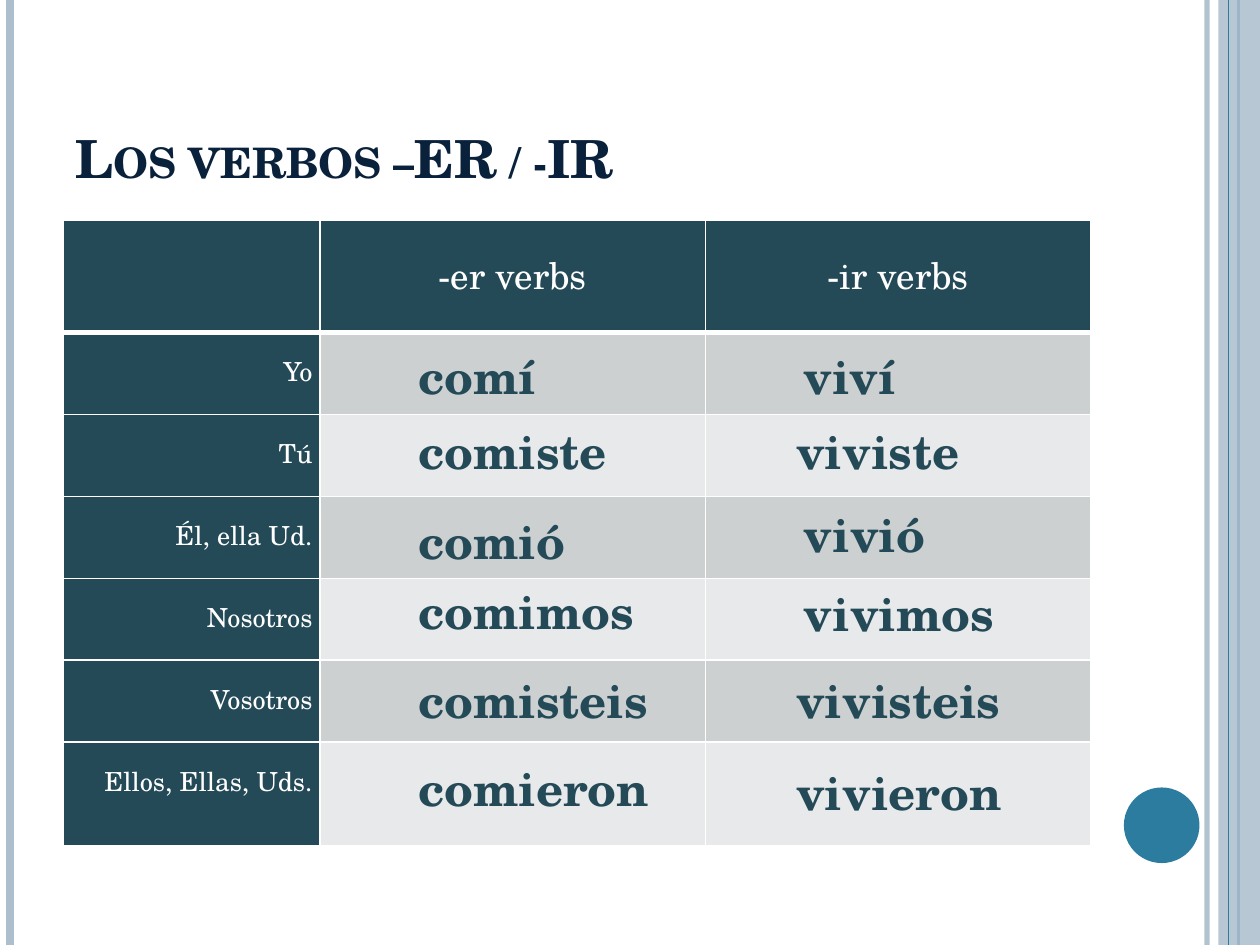
from dataclasses import dataclass

from lxml.etree import SubElement
from pptx import Presentation
from pptx.dml.color import RGBColor
from pptx.enum.shapes import MSO_CONNECTOR as Connector, MSO_SHAPE as Preset
from pptx.enum.text import MSO_ANCHOR as Anchor, MSO_AUTO_SIZE as AutoSize, PP_ALIGN as Align
from pptx.oxml.ns import qn
from pptx.slide import Slide
from pptx.util import Inches, Pt

COLORS = {
    "mist": "ADBFCD",
    "blue": "2C7C9F",
    "navy": "09213B",
    "teal": "244A58",
    "dark_band": "CDD0D1",
    "light_band": "E8E9EA",
    "white": "FFFFFF",
}


@dataclass
class SlideBuilder:
    """Draws styled elements on the current slide."""

    slide: Slide
    font: str = "TeX Gyre Schola"

    def paint(self, fill, color, opacity=100):
        fill.solid()
        fill.fore_color.rgb = RGBColor.from_string(COLORS[color])
        if opacity < 100:
            tint = fill._xPr.find(qn("a:solidFill"))[0]
            SubElement(tint, qn("a:alpha"), val=str(opacity * 1000))

    def stripe(self, x, color, width, opacity=100):
        line = self.slide.shapes.add_connector(
            Connector.STRAIGHT, Inches(x), Inches(0), Inches(x), Inches(7.5))
        line.line.width = Pt(width)
        self.paint(line.line.fill, color, opacity)
        SubElement(line._element.spPr, qn("a:effectLst"))

    def block(self, preset, box, color, opacity=100):
        shape = self.slide.shapes.add_shape(preset, *map(Inches, box))
        shape.shadow.inherit = False
        shape.line.fill.background()
        self.paint(shape.fill, color, opacity)

    def add_words(self, paragraph, words, size, color, bold=False):
        run = paragraph.add_run()
        run.text = words
        run.font.name = self.font
        run.font.size = Pt(size)
        run.font.bold = bold
        run.font.color.rgb = RGBColor.from_string(COLORS[color])
        return run

    def label(self, box, words, size, color):
        frame = self.slide.shapes.add_textbox(*map(Inches, box)).text_frame
        frame.word_wrap = True
        frame.auto_size = AutoSize.SHAPE_TO_FIT_TEXT
        self.add_words(frame.paragraphs[0], words, size, color, bold=True)

    def title(self, box, words):
        frame = self.slide.shapes.add_textbox(*map(Inches, box)).text_frame
        frame.word_wrap = True
        frame.vertical_anchor = Anchor.BOTTOM
        run = self.add_words(frame.paragraphs[0], words, 30, "navy", bold=True)
        run._r.get_or_add_rPr().set("cap", "small")

    def cell(self, cell, words, color, size, align, bottom_border):
        borders = {"lnL": 1, "lnR": 1, "lnT": 1, "lnB": bottom_border}
        for side, width in borders.items():
            edge = SubElement(cell._tc.get_or_add_tcPr(), qn(f"a:{side}"), w=str(Pt(width)))
            paint = SubElement(edge, qn("a:solidFill"))
            SubElement(paint, qn("a:srgbClr"), val=COLORS["white"])
        self.paint(cell.fill, color)
        cell.margin_left = cell.margin_right = Inches(0.06)
        cell.margin_top = cell.margin_bottom = Inches(0)
        if words:
            paragraph = cell.text_frame.paragraphs[0]
            paragraph.alignment = align
            paragraph.line_spacing = 1.5
            self.add_words(paragraph, words, size, "white")

    def table(self, box, widths, heights, headings, subjects):
        grid = self.slide.shapes.add_table(
            len(heights), len(widths), *map(Inches, box)).table
        for column, width in zip(grid.columns, widths):
            column.width = Inches(width)
        for row, height in zip(grid.rows, heights):
            row.height = Inches(height)
        for column, heading in enumerate(headings):
            self.cell(grid.cell(0, column), heading, "teal", 21, Align.CENTER, 3)
        for row, subject in enumerate(subjects, start=1):
            band = "dark_band" if row % 2 else "light_band"
            self.cell(grid.cell(row, 0), subject, "teal", 15, Align.RIGHT, 1)
            for column in range(1, len(widths)):
                self.cell(grid.cell(row, column), "", band, 15, Align.LEFT, 1)


def main():
    deck = Presentation()
    deck.slide_width, deck.slide_height = Inches(10), Inches(7.5)
    page = SlideBuilder(deck.slides.add_slide(deck.slide_layouts[6]))

    page.stripe(9.58, "mist", 3, opacity=93)
    page.stripe(0.08, "mist", 4.5)
    page.stripe(9.83, "blue", 1.5)
    page.block(Preset.RECTANGLE, (9.67, 0, 0.33, 7.5), "mist", opacity=87)
    page.stripe(9.75, "blue", 0.75)
    page.block(Preset.OVAL, (8.92, 6.25, 0.6, 0.6), "blue")

    page.title((0.5, 0.3, 8.17, 1.25), "Los verbos –ER / -IR")
    page.table(
        (0.5, 1.75, 8.17, 4.95),
        widths=[2.04, 3.06, 3.06],
        heights=[0.89] + [0.65] * 5 + [0.82],
        headings=["", "-er verbs", "-ir verbs"],
        subjects=["Yo", "Tú", "Él, ella Ud.", "Nosotros", "Vosotros", "Ellos, Ellas, Uds."],
    )

    conjugations = [
        ("comí", 3.22, 2.71, 1.37),
        ("comiste", 3.22, 3.3, 1.71),
        ("comió", 3.22, 4.02, 1.71),
        ("comimos", 3.22, 4.57, 2.25),
        ("comisteis", 3.22, 5.28, 2.25),
        ("comieron", 3.22, 5.98, 2.25),
        ("viví", 6.28, 2.71, 1.37),
        ("viviste", 6.22, 3.3, 1.71),
        ("vivió", 6.28, 3.96, 1.71),
        ("vivimos", 6.28, 4.59, 2.25),
        ("vivisteis", 6.22, 5.28, 2.25),
        ("vivieron", 6.22, 6.01, 2.25),
    ]
    for verb, left, top, width in conjugations:
        page.label((left, top, width, 0.56), verb, 27, "teal")

    deck.save("out.pptx")


if __name__ == "__main__":
    main()
